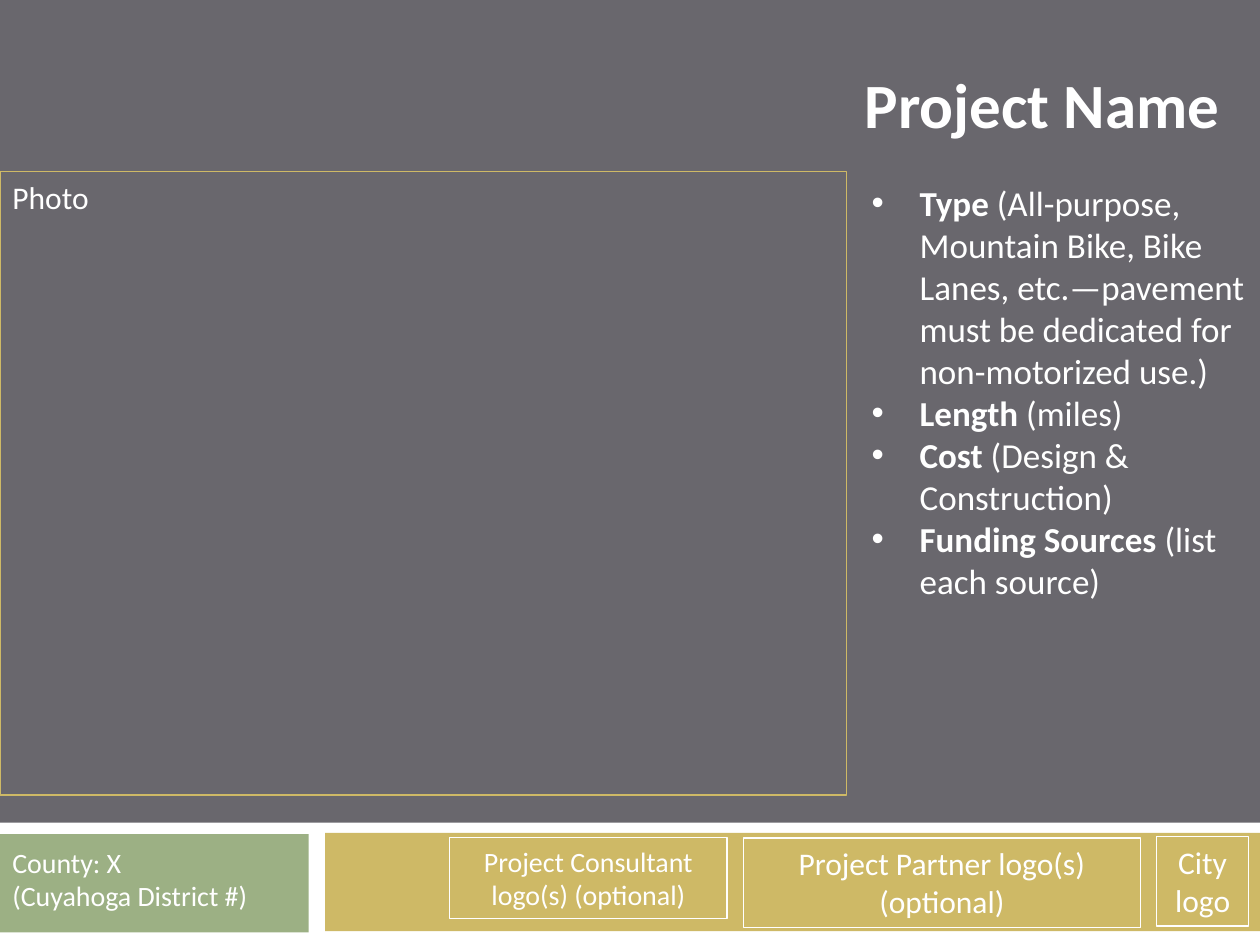
from lxml.etree import SubElement
from pptx import Presentation
from pptx.dml.color import RGBColor as Rgb
from pptx.enum.shapes import MSO_SHAPE as Shape
from pptx.enum.text import MSO_ANCHOR as Anchor, MSO_AUTO_SIZE as Fit, PP_ALIGN as Align
from pptx.oxml.ns import qn
from pptx.util import Inches, Pt

COLORS = {"back": "69676D", "white": "FFFFFF", "green": "9CB084", "gold": "CEB966"}
FONT = "Calibri"
COLS, ROWS = 100, 75
INDENT = Inches(0.38)


class Deck:
    """Holds the style and the slide; boxes are (column, row, columns, rows)."""

    def __init__(self):
        self.prs = Presentation()
        self.prs.slide_width, self.prs.slide_height = Inches(10), Inches(7.5)
        self.slide = self.prs.slides.add_slide(self.prs.slide_layouts[5])
        fill = self.slide.background.fill
        fill.solid()
        fill.fore_color.rgb = self.color("back")

    def color(self, name):
        return Rgb.from_string(COLORS[name])

    def place(self, box):
        wide = self.prs.slide_width / COLS
        high = self.prs.slide_height / ROWS
        return [round(n * unit) for n, unit in zip(box, (wide, high) * 2)]

    def label(self, shape, paras, size, align=Align.LEFT, anchor=Anchor.TOP, bullet=False):
        """Fill a shape with paragraphs, each a list of (text, bold) runs."""
        frame = shape.text_frame
        frame.word_wrap = True
        frame.auto_size = Fit.NONE
        frame.vertical_anchor = anchor
        for i, runs in enumerate(paras):
            para = frame.add_paragraph() if i else frame.paragraphs[0]
            para.alignment = align
            if bullet:
                self.bullet(para)
            for text, bold in runs:
                run = para.add_run()
                run.text = text
                font = run.font
                font.name, font.size, font.bold = FONT, Pt(size), bold
                font.color.rgb = self.color("white")

    def bullet(self, para):
        props = para._p.get_or_add_pPr()
        props.set("marL", str(INDENT))
        props.set("indent", str(-INDENT))
        SubElement(props, qn("a:buFont"), typeface="Arial")
        SubElement(props, qn("a:buChar"), char="•")

    def title(self, box, text, size):
        shape = self.slide.shapes.title
        shape.left, shape.top, shape.width, shape.height = self.place(box)
        self.label(shape, [[(text, True)]], size, Align.RIGHT, Anchor.BOTTOM)

    def text(self, box, paras, size, **style):
        shape = self.slide.shapes.add_textbox(*self.place(box))
        self.label(shape, paras, size, **style)

    def rect(self, box, fill=None, line=None):
        shape = self.slide.shapes.add_shape(Shape.RECTANGLE, *self.place(box))
        shape.shadow.inherit = False
        if fill:
            shape.fill.solid()
            shape.fill.fore_color.rgb = self.color(fill)
        else:
            shape.fill.background()
        if line:
            shape.line.color.rgb = self.color(line)
            shape.line.width = Pt(0.75)
        else:
            shape.line.fill.background()
        return shape

    def frame(self, box, lines, size, line="white", align=Align.CENTER):
        """Draw an outlined area with plain lines of text in it."""
        self.label(self.rect(box, line=line), plain(lines), size, align)

    def save(self):
        self.prs.save("out.pptx")


def plain(lines):
    return [[(line, False)] for line in lines]


BANDS = [
    ((0, 65.3, 100, 9.7), "white"),
    ((-0.1, 66.2, 24.6, 7.8), "green"),
    ((25.8, 66.1, 74.2, 7.8), "gold"),
]
FACTS = [
    ("Type ", "(All-purpose, Mountain Bike, Bike Lanes, etc.—pavement "
              "must be dedicated for non-motorized use.)"),
    ("Length", " (miles)"),
    ("Cost ", "(Design & Construction)"),
    ("Funding Sources ", "(list each source)"),
]
LOGOS = [
    ((91.8, 66.4, 7.3, 7.1), ["City logo"], 18),
    ((59, 66.5, 31.5, 7.1), ["Project Partner logo(s)", "(optional)"], 18),
    ((35.7, 66.5, 22, 6.4), ["Project Consultant logo(s) (optional)"], 16),
]


def main():
    deck = Deck()
    for box, fill in BANDS:
        deck.rect(box, fill)
    deck.title((0, 1.7, 97.8, 10), "Project Name", 36)
    deck.text((0, 66.6, 24, 6.4), plain(["County: X", "(Cuyahoga District #)"]), 16)
    deck.frame((0, 13.6, 67.2, 49.5), ["Photo"], 18, "gold", Align.LEFT)
    facts = [[(name, True), (note, False)] for name, note in FACTS]
    deck.text((68.2, 13.9, 31.8, 34.7), facts, 20, bullet=True)
    for box, lines, size in LOGOS:
        deck.frame(box, lines, size)
    deck.save()


if __name__ == "__main__":
    main()
